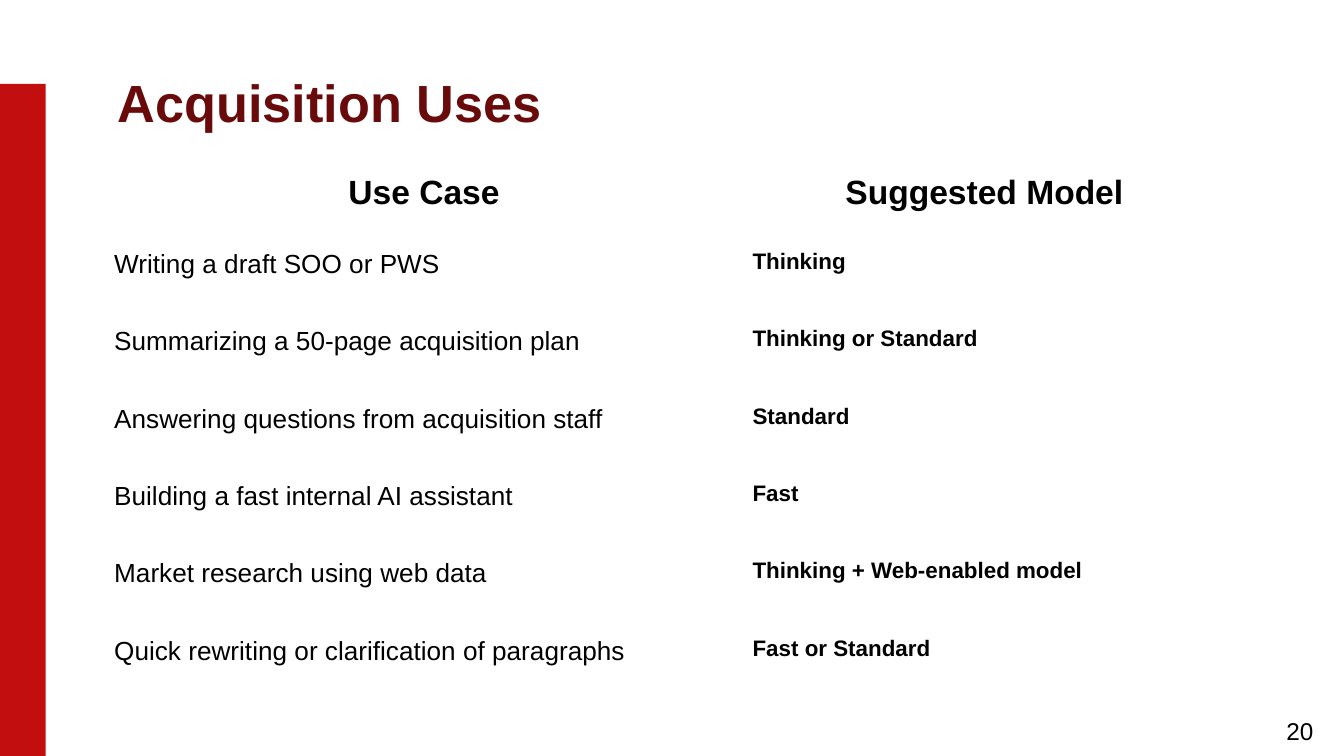
from lxml import etree
from pptx import Presentation
from pptx.dml.color import RGBColor
from pptx.enum.shapes import MSO_SHAPE
from pptx.enum.text import MSO_ANCHOR, PP_ALIGN
from pptx.oxml.ns import qn
from pptx.util import Inches, Pt

RECTANGLE = MSO_SHAPE.RECTANGLE
TOP, MIDDLE = MSO_ANCHOR.TOP, MSO_ANCHOR.MIDDLE
LEFT, CENTER, RIGHT = PP_ALIGN.LEFT, PP_ALIGN.CENTER, PP_ALIGN.RIGHT

TITLE = "Acquisition Uses"
PAGE_NUMBER = "20"
HEADINGS = ("Use Case", "Suggested Model")
USES = [
    ("Writing a draft SOO or PWS", "Thinking"),
    ("Summarizing a 50-page acquisition plan", "Thinking or Standard"),
    ("Answering questions from acquisition staff", "Standard"),
    ("Building a fast internal AI assistant", "Fast"),
    ("Market research using web data", "Thinking + Web-enabled model"),
    ("Quick rewriting or clarification of paragraphs", "Fast or Standard"),
]

COLORS = {"bar": "C20E0E", "title": "690B0B", "text": "000000"}
FONT = "Arial"
WIDTH = 10
HEIGHT = WIDTH * 9 / 16
MARGIN = 0.78
BAR_WIDTH, BAR_HEIGHT = 0.34, 5
TABLE_TOP, TABLE_HEIGHT = 1.18, 4.03
COLUMN_WIDTHS = (4.75, 3.59)
TEXT_INSET, CELL_INSET = 0.1, 0.07
HEADING_FORMAT = {"size": 18, "bold": True, "align": CENTER, "spacing": 1.15}
COLUMN_FORMATS = (
    {"size": 14, "spacing": 1.15},
    {"size": 12, "bold": True, "spacing": 1.15},
)


def write(frame, text, size, bold=False, color="text", align=LEFT, spacing=1.0):
    para = frame.paragraphs[0]
    para.alignment = align
    para.line_spacing = spacing
    span = para.add_run()
    span.text = text
    span.font.name = FONT
    span.font.size = Pt(size)
    span.font.bold = bold
    span.font.color.rgb = RGBColor.from_string(COLORS[color])


def set_insets(target, inset):
    target.margin_left = target.margin_right = Inches(inset)
    target.margin_top = target.margin_bottom = Inches(inset)


def add_text(page, area, text, anchor=TOP, **style):
    box = page.shapes.add_textbox(*map(Inches, area))
    frame = box.text_frame
    frame.word_wrap = True
    frame.vertical_anchor = anchor
    set_insets(frame, TEXT_INSET)
    write(frame, text, **style)


def clear_cell(cell):
    set_insets(cell, CELL_INSET)
    properties = cell._tc.get_or_add_tcPr()
    for side in ("a:lnL", "a:lnR", "a:lnT", "a:lnB"):
        line = etree.SubElement(properties, qn(side), w=str(Pt(0.75)))
        etree.SubElement(line, qn("a:noFill"))
    cell.fill.background()


def add_uses_table(page):
    rows = [HEADINGS, *USES]
    area = (MARGIN, TABLE_TOP, sum(COLUMN_WIDTHS), TABLE_HEIGHT)
    table = page.shapes.add_table(
        len(rows), len(HEADINGS), *map(Inches, area)
    ).table
    table.first_row = table.horz_banding = False
    for column, width in zip(table.columns, COLUMN_WIDTHS):
        column.width = Inches(width)
    for row_index, row in enumerate(rows):
        table.rows[row_index].height = Inches(TABLE_HEIGHT / len(rows))
        for column_index, text in enumerate(row):
            cell = table.cell(row_index, column_index)
            clear_cell(cell)
            style = COLUMN_FORMATS[column_index] if row_index else HEADING_FORMAT
            write(cell.text_frame, text, **style)


def main():
    deck = Presentation()
    deck.slide_width, deck.slide_height = Inches(WIDTH), Inches(HEIGHT)
    page = deck.slides.add_slide(deck.slide_layouts[6])

    bar_area = (0, HEIGHT - BAR_HEIGHT, BAR_WIDTH, BAR_HEIGHT)
    bar = page.shapes.add_shape(RECTANGLE, *map(Inches, bar_area))
    bar.shadow.inherit = False
    bar.fill.solid()
    bar.fill.fore_color.rgb = RGBColor.from_string(COLORS["bar"])
    bar.line.fill.background()

    add_text(page, (9.27, 5.22, 0.6, 0.43), PAGE_NUMBER, anchor=MIDDLE,
             size=13, align=RIGHT)
    add_text(page, (MARGIN, 0.42, WIDTH - 2 * MARGIN, 0.63), TITLE,
             size=28, bold=True, color="title")
    add_uses_table(page)
    deck.save("out.pptx")


if __name__ == "__main__":
    main()
